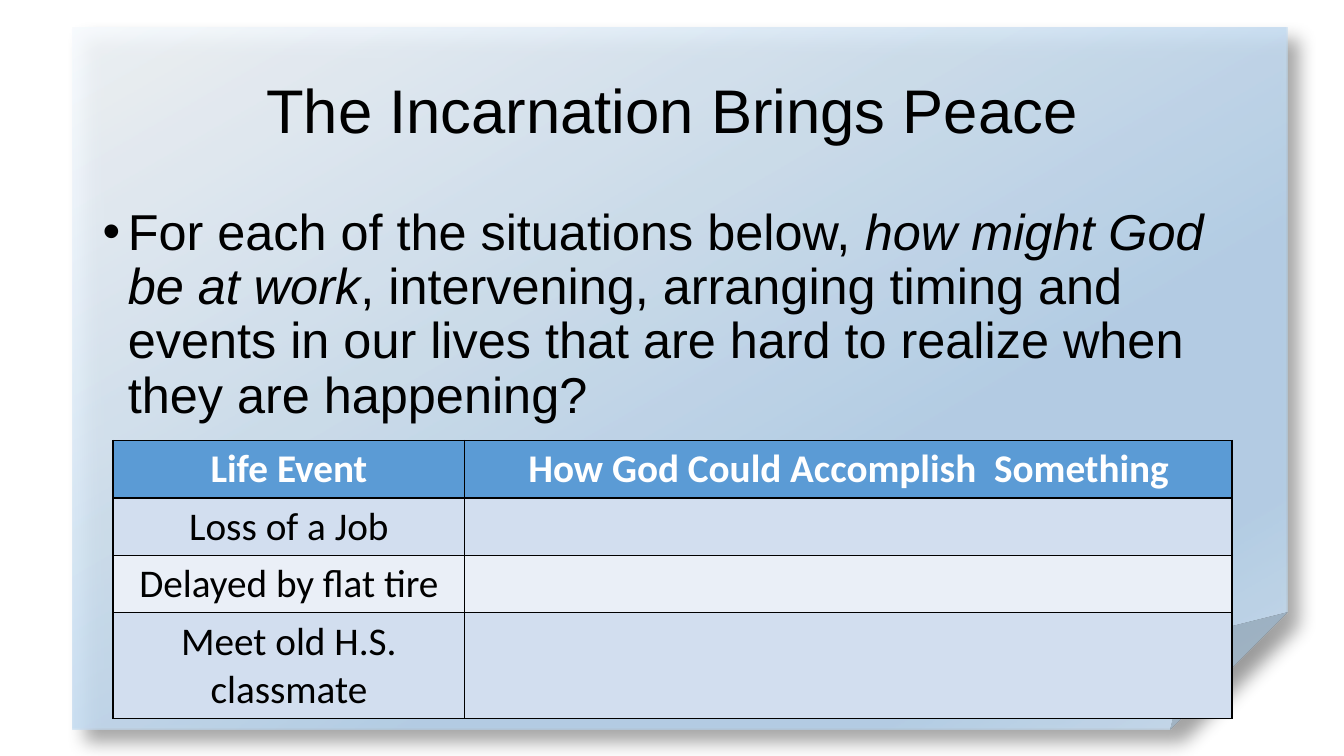
from lxml import etree
from pptx import Presentation
from pptx.dml.color import RGBColor
from pptx.enum.shapes import MSO_SHAPE as Preset
from pptx.enum.text import MSO_ANCHOR as Anchor, PP_ALIGN as Align
from pptx.oxml import parse_xml
from pptx.oxml.ns import nsdecls, qn
from pptx.util import Inches, Pt

COLORS = {
    "black": "000000", "white": "FFFFFF", "header": "5B9BD5",
    "band_dark": "D2DEEF", "band_light": "EAEFF7",
}
PAPER_STOPS = [(0, "F7FAFD"), (64, "B5D2EC"), (83, "B5D2EC"), (100, "CEE1F2")]
LIFE_EVENTS = ["Loss of a Job", "Delayed by flat tire", "Meet old H.S. classmate"]


def rgb(name):
    return RGBColor.from_string(COLORS[name])


def add_run(paragraph, text, size, font="Arial", color="black", bold=False, italic=False):
    run = paragraph.add_run()
    run.text = text
    run.font.name, run.font.size = font, Pt(size)
    run.font.bold, run.font.italic = bold, italic
    run.font.color.rgb = rgb(color)


def add_paper(slide, left, top, width, height):
    """Folded sheet with a translucent gradient and a soft shadow."""
    shape = slide.shapes.add_shape(
        Preset.FOLDED_CORNER, Inches(left), Inches(top), Inches(width), Inches(height))
    shape.line.fill.background()
    stops = "".join(
        f'<a:gs pos="{position * 1000}"><a:srgbClr val="{color}">'
        f'<a:alpha val="87000"/></a:srgbClr></a:gs>'
        for position, color in PAPER_STOPS)
    gradient = parse_xml(
        f'<a:gradFill {nsdecls("a")} rotWithShape="1"><a:gsLst>{stops}</a:gsLst>'
        f'<a:lin ang="3600000" scaled="0"/></a:gradFill>')
    shadow = parse_xml(
        f'<a:effectLst {nsdecls("a")}><a:outerShdw blurRad="{Pt(13)}" dist="{Pt(13)}" '
        f'dir="2700000" algn="tl" rotWithShape="0"><a:srgbClr val="{COLORS["black"]}">'
        f'<a:alpha val="40000"/></a:srgbClr></a:outerShdw></a:effectLst>')
    properties = shape.fill._xPr
    properties.find(qn("a:prstGeom")).addnext(gradient)
    properties.find(qn("a:ln")).addnext(shadow)


def add_text(slide, left, top, width, height, anchor=Anchor.TOP):
    """Wrapping text box; returns its first paragraph."""
    box = slide.shapes.add_textbox(Inches(left), Inches(top), Inches(width), Inches(height))
    frame = box.text_frame
    frame.word_wrap = True
    frame.vertical_anchor = anchor
    paragraph = frame.paragraphs[0]
    paragraph.line_spacing = 0.9
    return paragraph


def add_bullet(paragraph):
    properties = paragraph._p.get_or_add_pPr()
    properties.set("marL", str(Inches(0.25)))
    properties.set("indent", str(Inches(-0.25)))
    etree.SubElement(properties, qn("a:buFont")).set("typeface", "Arial")
    etree.SubElement(properties, qn("a:buChar")).set("char", "•")


def style_cell(cell, fill):
    """Black border on all four sides, then a solid fill."""
    properties = cell._tc.get_or_add_tcPr()
    for side in ("lnL", "lnR", "lnT", "lnB"):
        properties.append(parse_xml(
            f'<a:{side} {nsdecls("a")} w="{Pt(1)}"><a:solidFill>'
            f'<a:srgbClr val="{COLORS["black"]}"/></a:solidFill></a:{side}>'))
    cell.fill.solid()
    cell.fill.fore_color.rgb = rgb(fill)


def add_event_table(slide, left, top, widths, heights):
    rows = [("Life Event", "How God Could Accomplish  Something")]
    rows += [(event, "") for event in LIFE_EVENTS]
    table = slide.shapes.add_table(
        len(rows), len(widths), Inches(left), Inches(top),
        Inches(sum(widths)), Inches(sum(heights))).table
    for column, width in zip(table.columns, widths):
        column.width = Inches(width)
    for index, (texts, height) in enumerate(zip(rows, heights)):
        is_header = index == 0
        table.rows[index].height = Inches(height)
        band = "header" if is_header else "band_dark" if index % 2 else "band_light"
        for column, text in enumerate(texts):
            cell = table.cell(index, column)
            style_cell(cell, band)
            if text:
                paragraph = cell.text_frame.paragraphs[0]
                paragraph.alignment = Align.CENTER
                add_run(paragraph, text, 28, "Calibri",
                        "white" if is_header else "black", bold=is_header)


def main():
    presentation = Presentation()
    presentation.slide_width = Inches(13.33)
    presentation.slide_height = Inches(7.5)
    slide = presentation.slides.add_slide(presentation.slide_layouts[6])

    # Background sheet
    add_paper(slide, 0.72, 0.27, 12.05, 6.97)

    # Title
    title = add_text(slide, 0.92, 0.4, 11.5, 1.45, Anchor.MIDDLE)
    title.alignment = Align.CENTER
    add_run(title, "The Incarnation Brings Peace", 44)

    # Question
    question = add_text(slide, 0.92, 2, 11.5, 2.3)
    question.space_before = Pt(10)
    add_bullet(question)
    add_run(question, "For each of the situations below, ", 36)
    add_run(question, "how might God be at work", 36, italic=True)
    add_run(question, ", intervening, arranging timing and events in our lives "
            "that are hard to realize when they are happening?", 36)

    # Table of life events
    add_event_table(slide, 1.12, 4.37, [3.49, 7.61], [0.57, 0.57, 0.57, 1.05])

    presentation.save("out.pptx")


if __name__ == "__main__":
    main()
